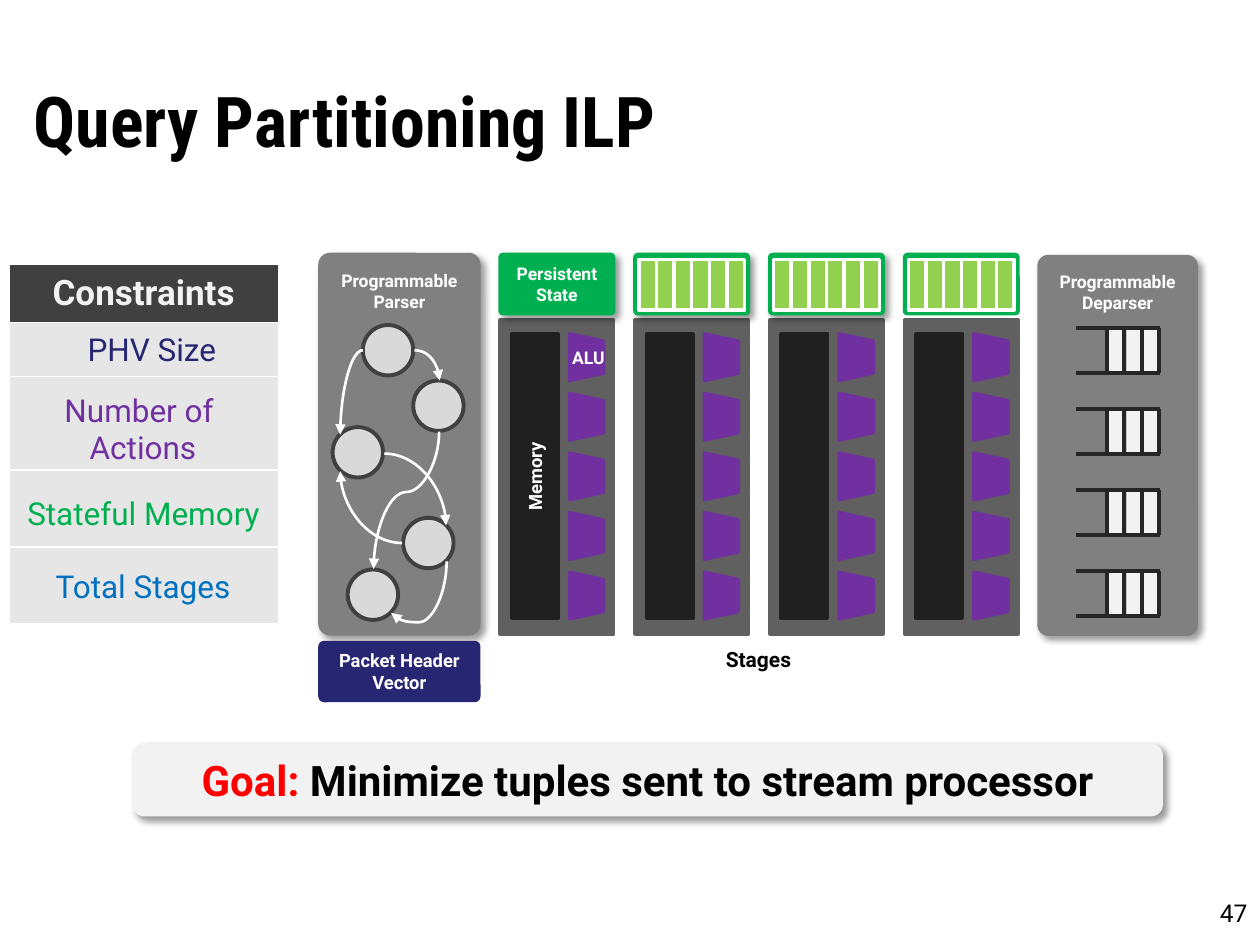
from lxml.etree import SubElement
from pptx import Presentation
from pptx.dml.color import RGBColor as Rgb
from pptx.enum.shapes import MSO_CONNECTOR as Link, MSO_SHAPE as Kind
from pptx.enum.text import MSO_ANCHOR as Anchor, PP_ALIGN as Align
from pptx.oxml.ns import qn
from pptx.util import Inches, Pt

COLORS = {
    "black": "000000", "white": "FFFFFF", "red": "FF0000", "pale": "F2F2F2",
    "cell": "E6E6E6", "header": "404040", "block": "808080", "stage": "606060",
    "memory": "202020", "queue": "262626", "node": "D9D9D9", "purple": "7030A0",
    "green": "00B050", "slot": "92D050", "navy": "262673", "blue": "0070C0",
}

deck = Presentation()
deck.slide_width, deck.slide_height = Inches(10), Inches(7.5)
slide = deck.slides.add_slide(deck.slide_layouts[6])

# Grid of 100 columns by 75 rows; all places below are in these units
COL, ROW = deck.slide_width / 100, deck.slide_height / 75


def add_part(shapes, kind, at, fill=None, line=None, width=2, adj=None, shadow=False,
             text=(), size=10, bold=True, font="Roboto", align=Align.CENTER,
             anchor=Anchor.MIDDLE, wrap=True):
    """Add a shape, or a text box if kind is None; text is a list of paragraphs of runs."""
    box = [int(n * unit) for n, unit in zip(at, (COL, ROW, COL, ROW))]
    if kind is None:
        part = shapes.add_textbox(*box)
    else:
        part = shapes.add_shape(kind, *box)
        part.shadow.inherit = False
        part.fill.solid()
        part.fill.fore_color.rgb = Rgb.from_string(COLORS[fill])
        if line:
            part.line.color.rgb = Rgb.from_string(COLORS[line])
            part.line.width = Pt(width)
        else:
            part.line.fill.background()
    if adj is not None:
        part.adjustments[0] = adj
    if shadow:
        effects = part._element.spPr.find(qn("a:effectLst"))
        outer = SubElement(effects, qn("a:outerShdw"), blurRad=str(Pt(4)), dist=str(Pt(3)),
                           dir="2700000", algn="tl", rotWithShape="0")
        tint = SubElement(outer, qn("a:srgbClr"), val=COLORS["black"])
        SubElement(tint, qn("a:alpha"), val="40000")
    frame = part.text_frame
    frame.word_wrap, frame.vertical_anchor = wrap, anchor
    for i, runs in enumerate(text):
        paragraph = frame.add_paragraph() if i else frame.paragraphs[0]
        paragraph.alignment = align
        for words, color in runs:
            run = paragraph.add_run()
            run.text = words
            run.font.name, run.font.size, run.font.bold = font, Pt(size), bold
            run.font.color.rgb = Rgb.from_string(COLORS[color])
    return part


def add_line(shapes, kind, start, end, color, width):
    """Add a connector without a shadow."""
    link = shapes.add_connector(kind, int(start[0] * COL), int(start[1] * ROW),
                                int(end[0] * COL), int(end[1] * ROW))
    link.line.color.rgb = Rgb.from_string(COLORS[color])
    link.line.width = Pt(width)
    SubElement(link._element.spPr, qn("a:effectLst"))
    return link


# Title and page number
add_part(slide.shapes, None, (1.7, 3.2, 95.8, 12.5), size=40, font="Roboto Condensed",
         text=[[("Query Partitioning ILP", "black")]], align=Align.LEFT)
add_part(slide.shapes, None, (76.7, 70.8, 23.3, 2.5), size=14, bold=False,
         text=[[("47", "black")]], align=Align.RIGHT, anchor=Anchor.TOP)

# Constraints table
row_heights = [4.6, 4.3, 7.4, 6.1, 6.1]
constraints = slide.shapes.add_table(
    len(row_heights), 1, int(0.7 * COL), int(21 * ROW), int(21.4 * COL),
    int(sum(row_heights) * ROW)).table
for i, height in enumerate(row_heights):
    constraints.rows[i].height = int(height * ROW)
    cell = constraints.cell(i, 0)
    cell.vertical_anchor = Anchor.MIDDLE
    for side in ("a:lnL", "a:lnR", "a:lnT", "a:lnB"):
        border = SubElement(cell._tc.get_or_add_tcPr(), qn(side), w=str(Pt(1)))
        paint = SubElement(border, qn("a:solidFill"))
        SubElement(paint, qn("a:srgbClr"), val=COLORS["white"])
    cell.fill.solid()
    cell.fill.fore_color.rgb = Rgb.from_string(COLORS["cell" if i else "header"])
heading = constraints.cell(0, 0).text_frame.paragraphs[0]
heading.alignment = Align.CENTER
heading_run = heading.add_run()
heading_run.text = "Constraints"
heading_run.font.name, heading_run.font.size, heading_run.font.bold = "Roboto", Pt(20), True
heading_run.font.color.rgb = Rgb.from_string(COLORS["pale"])

# Goal banner
add_part(slide.shapes, Kind.ROUNDED_RECTANGLE, (10.5, 59, 81.8, 5.8), "pale", shadow=True,
         size=24, text=[[("Goal: ", "red"),
                         ("Minimize tuples sent to stream processor", "black")]])

# Parser and deparser blocks
for name, left, top, outline in (("Deparser", 82.4, 20.3, 1), ("Parser", 25.4, 20.2, 2)):
    block = add_part(slide.shapes, Kind.ROUNDED_RECTANGLE, (left, top, 12.6, 30.1), "block",
                     "block", outline, adj=0.063, shadow=True, anchor=Anchor.TOP,
                     text=[[("Programmable " + name, "white")]])
    block.text_frame.margin_top = int(ROW)

# Deparser queues
for i in range(4):
    top = 26 + 6.43 * i
    queue = slide.shapes.add_group_shape().shapes
    for j in range(3):
        add_part(queue, Kind.RECTANGLE, (88 + 1.4 * j, top, 1.1, 3.5), "pale")
    for y in (top, top + 3.6):
        add_line(queue, Link.STRAIGHT, (92.1, y), (85.4, y), "queue", 2.25)
    for j in range(4):
        x = 92 - 1.38 * j
        add_line(queue, Link.STRAIGHT, (x, top + 3.6), (x, top), "queue", 2.25)

# Match-action stages
add_part(slide.shapes, None, (56.4, 50.8, 7.6, 3), size=12, wrap=False,
         text=[[("Stages", "black")]], anchor=Anchor.TOP)
for i in range(4):
    left = 39.7 + 10.7 * i
    add_part(slide.shapes, Kind.RECTANGLE, (left, 25.4, 9, 24.9), "stage", "stage")
    for j in range(5):
        alu = add_part(slide.shapes, Kind.TRAPEZOID, (left + 5, 27 + 4.73 * j, 3.7, 2.7),
                       "purple", "purple", adj=0.216)
        alu.rotation = 90
    memory = add_part(slide.shapes, Kind.RECTANGLE, (left + 0.9, 26.5, 3.7, 22.6), "memory",
                      "memory", size=10.5, text=[] if i else [[("Memory", "white")]])
    memory.text_frame._txBody.bodyPr.set("vert", "vert270")
    add_part(slide.shapes, Kind.ROUNDED_RECTANGLE, (left, 20.2, 9, 4.7), "green", "green",
             adj=0.048, shadow=i < 3, text=[] if i else [[("Persistent State", "white")]])
    for j in range(6 if i else 0):
        add_part(slide.shapes, Kind.RECTANGLE, (left + 0.3 + 1.4 * j, 20.6, 1.4, 4),
                 "slot", "white")
add_part(slide.shapes, None, (44.3, 27, 4.8, 2.7), text=[[("ALU", "white")]], wrap=False)

# Parser state machine
for x, y in ((28.8, 25.8), (32.8, 30.2), (26.4, 33.9), (32, 41.1), (27.6, 45.2)):
    add_part(slide.shapes, Kind.OVAL, (x, y, 4, 4), "node", "header", 2.25)

# Transitions: frame before turning, turn in degrees, upside down, bend of an S curve
transitions = [
    ((30.5, 36, 4.9, 5.7), 0, False, None),
    ((27, 37.4, 4.9, 5.7), 180, False, None),
    ((32.9, 27.8, 2, 2.4), 0, False, None),
    ((26.8, 37.1, 10.9, 5.2), 90, False, 0.44),
    ((31.2, 44.4, 4.1, 4.4), 90, False, 1.18),
    ((27, 27.8, 1.8, 6.7), 180, True, None),
]
for (x, y, w, h), turn, flipped, bend in transitions:
    arrow = add_line(slide.shapes, Link.CURVE, (x, y), (x + w, y + h), "white", 1.5)
    properties = arrow._element.spPr
    properties.find(qn("a:xfrm")).set("rot", str(turn * 60000))
    if flipped:
        properties.find(qn("a:xfrm")).set("flipV", "1")
    curve = properties.find(qn("a:prstGeom"))
    if bend is None:
        curve.set("prst", "curvedConnector2")
    else:
        SubElement(curve.find(qn("a:avLst")), qn("a:gd"), name="adj1",
                   fmla=f"val {round(bend * 100000)}")
    SubElement(properties.find(qn("a:ln")), qn("a:tailEnd"), type="triangle")

# Constraint labels over the table rows
for lines, color, at in (
    (["PHV Size"], "navy", (5.8, 25.7, 12.5, 4)),
    (["Number of ", "Actions"], "purple", (4, 30.5, 14.7, 7.1)),
    (["Total Stages"], "blue", (3.4, 44.5, 15.9, 4)),
    (["Stateful Memory"], "green", (1.1, 38.7, 20.6, 4)),
):
    add_part(slide.shapes, None, at, text=[[(words, color)] for words in lines],
             size=18, bold=False, anchor=Anchor.TOP, wrap=False)

# Packet header vector
add_part(slide.shapes, Kind.ROUNDED_RECTANGLE, (25.4, 51, 12.6, 4.6), "navy", "navy",
         adj=0.072, size=10.5, text=[[("Packet Header Vector", "white")]])

deck.save("out.pptx")
